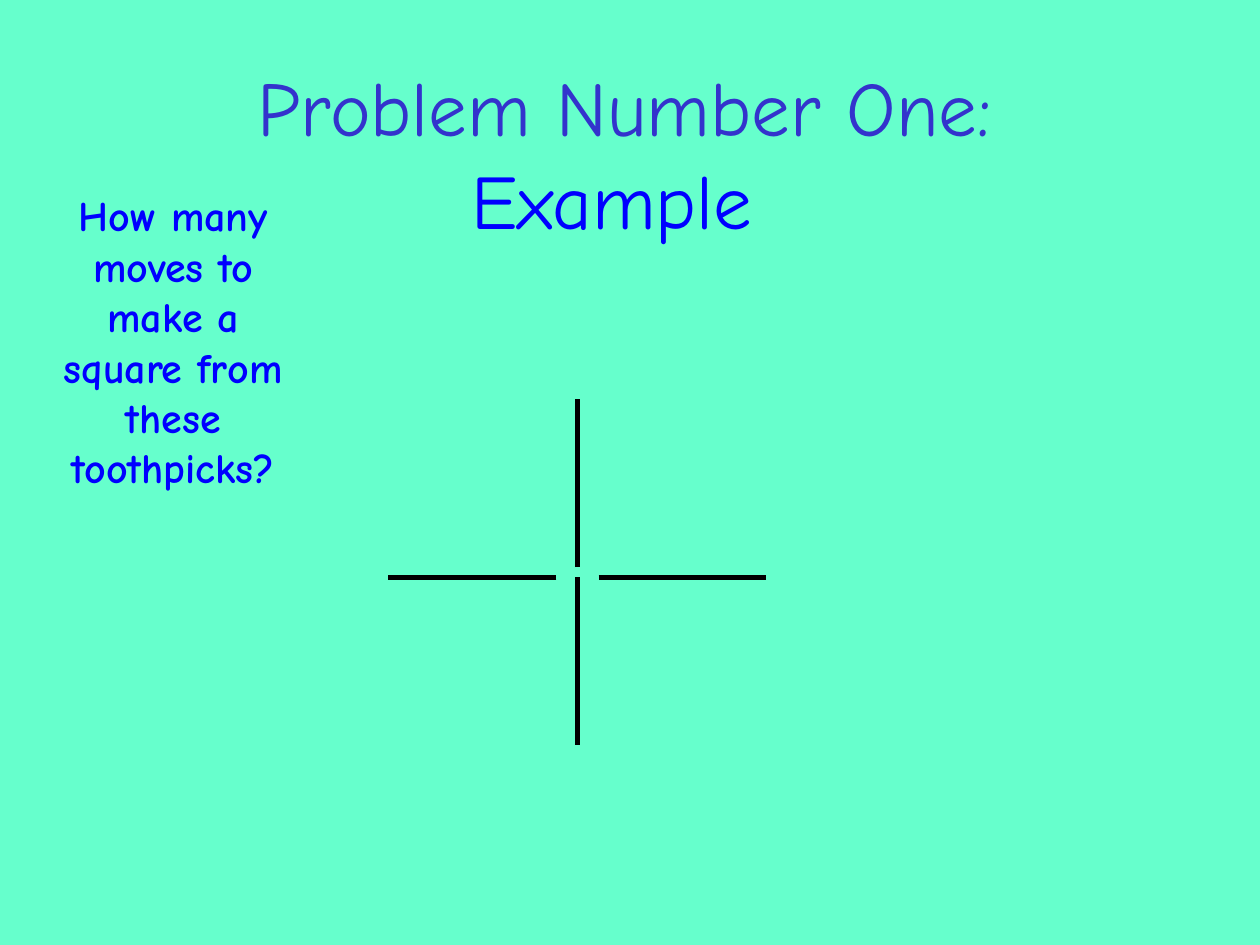
import pptx
import pptx.util
from lxml import etree
from pptx.dml.color import RGBColor
from pptx.enum.shapes import MSO_CONNECTOR
from pptx.enum.text import MSO_ANCHOR, MSO_AUTO_SIZE, PP_ALIGN
from pptx.oxml.ns import qn

Pt = pptx.util.Pt

MINT = RGBColor(0x66, 0xFF, 0xCC)
INDIGO = RGBColor(0x33, 0x33, 0xCC)
BLUE = RGBColor(0x00, 0x00, 0xFF)
BLACK = RGBColor(0x00, 0x00, 0x00)

CENTRE = 330
TOOTHPICK = 96


class PuzzleSlide:
    font = "Comic Neue"

    def __init__(self, slide):
        self.slide = slide
        background = slide.background.fill
        background.solid()
        background.fore_color.rgb = MINT

    def text(self, box, wording, size, colours, bold=False,
             anchor=MSO_ANCHOR.TOP, auto_size=MSO_AUTO_SIZE.NONE):
        """Add centred text, with one colour for each run."""
        frame = self.slide.shapes.add_textbox(*map(Pt, box)).text_frame
        frame.word_wrap = True
        frame.auto_size = auto_size
        frame.vertical_anchor = anchor
        paragraph = frame.paragraphs[0]
        paragraph.text = wording
        paragraph.alignment = PP_ALIGN.CENTER
        for run, colour in zip(paragraph.runs, colours):
            run.font.name = self.font
            run.font.size = Pt(size)
            run.font.bold = bold
            run.font.color.rgb = colour

    def toothpick(self, x, y, dx, dy):
        """Draw a toothpick from (x, y) in the direction (dx, dy)."""
        stick = self.slide.shapes.add_connector(
            MSO_CONNECTOR.STRAIGHT, Pt(x), Pt(y),
            Pt(x + dx * TOOTHPICK), Pt(y + dy * TOOTHPICK))
        stick.line.color.rgb = BLACK
        stick.line.width = Pt(3)
        etree.SubElement(stick._element.spPr, qn("a:effectLst"))


def main():
    deck = pptx.Presentation()
    deck.slide_width, deck.slide_height = Pt(720), Pt(540)
    puzzle = PuzzleSlide(deck.slides.add_slide(deck.slide_layouts[6]))

    puzzle.text((54, 30, 606, 114), "Problem Number One:\vExample ", 44,
                (INDIGO, BLUE), anchor=MSO_ANCHOR.MIDDLE)

    # Direction of each toothpick and its gap from the centre of the cross
    for dx, dy, gap in ((0, -1, 6), (0, 1, 0), (1, 0, 12), (-1, 0, 12)):
        puzzle.toothpick(CENTRE + dx * gap, CENTRE + dy * gap, dx, dy)

    puzzle.text((24, 105, 150, 180),
                "How many moves to make a square from these toothpicks?", 24,
                (BLUE,), bold=True, auto_size=MSO_AUTO_SIZE.SHAPE_TO_FIT_TEXT)

    deck.save("out.pptx")


if __name__ == "__main__":
    main()
